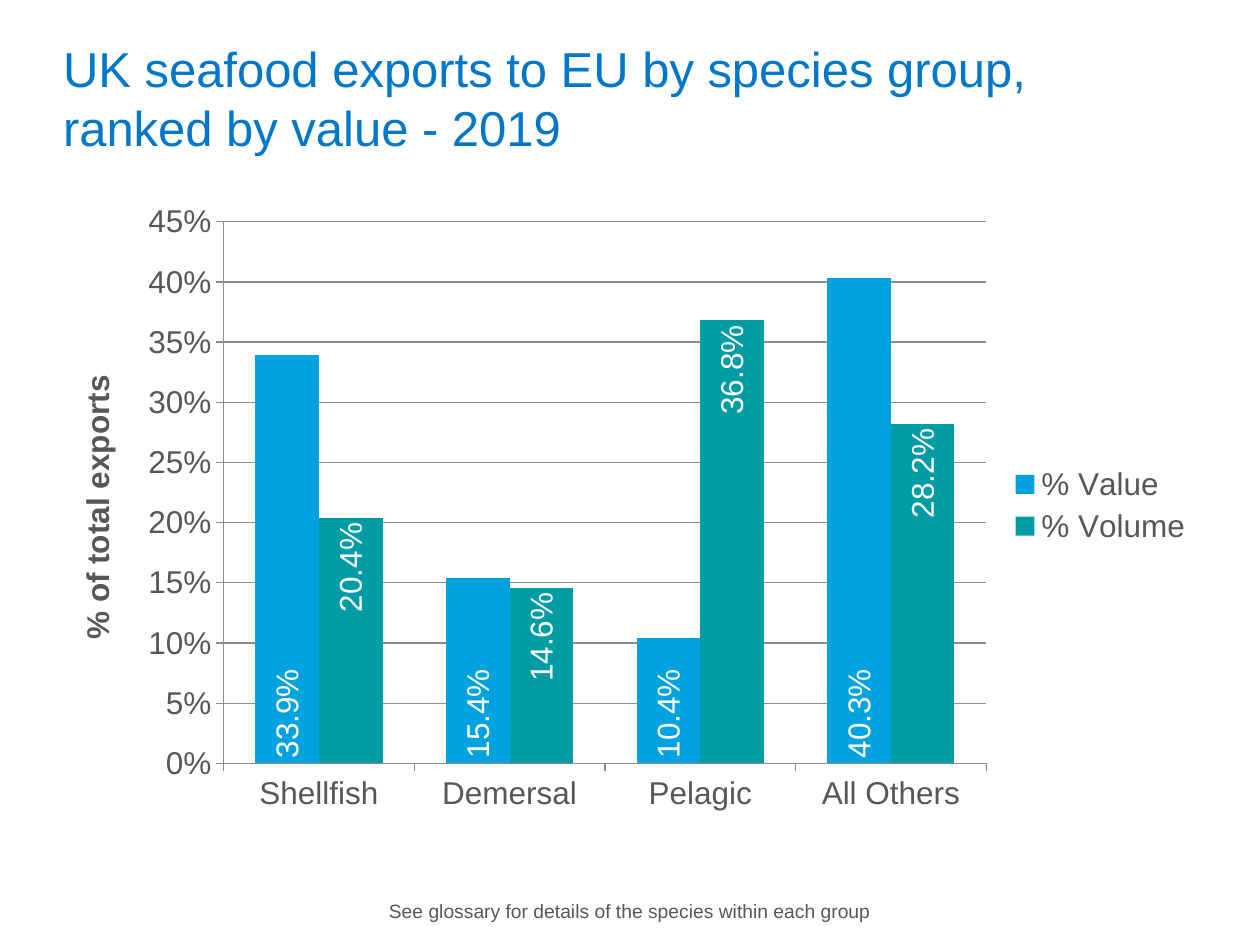
from lxml.etree import SubElement
from pptx import Presentation
from pptx.chart.data import CategoryChartData
from pptx.dml.color import RGBColor
from pptx.enum.chart import XL_CHART_TYPE, XL_LABEL_POSITION, XL_LEGEND_POSITION, XL_TICK_MARK
from pptx.enum.text import MSO_ANCHOR, MSO_AUTO_SIZE, PP_ALIGN
from pptx.oxml.ns import qn
from pptx.util import Inches, Pt

TITLE_BLUE = RGBColor(0x00, 0x77, 0xC8)
VALUE_BLUE = RGBColor(0x00, 0xA3, 0xE0)
VOLUME_TEAL = RGBColor(0x00, 0x9C, 0xA6)
TEXT_GREY = RGBColor(0x54, 0x58, 0x5A)
LINE_GREY = RGBColor(0x8C, 0x8C, 0x8C)
WHITE = RGBColor(0xFF, 0xFF, 0xFF)

FONT = "Arial"
WIDTH, HEIGHT = Inches(10), Inches(7.5)
LEFT, CONTENT_WIDTH = Inches(0.4), Inches(9.17)
GROUPS = ["Shellfish", "Demersal", "Pelagic", "All Others"]
SERIES = [
    ("% Value", [0.339, 0.154, 0.104, 0.403], VALUE_BLUE, XL_LABEL_POSITION.INSIDE_BASE),
    ("% Volume", [0.204, 0.146, 0.368, 0.282], VOLUME_TEAL, XL_LABEL_POSITION.INSIDE_END),
]
PLOT_SHARES = {"x": 0.15, "y": 0.05, "w": 0.66, "h": 0.86}


def style_font(font, size, color, bold=False):
    font.name = FONT
    font.size = Pt(size)
    font.bold = bold
    font.color.rgb = color


def style_text(frame, size, color, alignment):
    frame.word_wrap = True
    frame.auto_size = MSO_AUTO_SIZE.NONE
    for para in frame.paragraphs:
        para.alignment = alignment
        for span in para.runs:
            style_font(span.font, size, color)


def fill_title(page):
    title = page.shapes.title
    title.left, title.top = LEFT, Inches(0.3)
    title.width, title.height = CONTENT_WIDTH, Inches(0.94)
    frame = title.text_frame
    frame.text = "UK seafood exports to EU by species group,\vranked by value - 2019"
    frame.vertical_anchor = MSO_ANCHOR.MIDDLE
    style_text(frame, 28, TITLE_BLUE, PP_ALIGN.LEFT)


def style_line(line):
    line.color.rgb = LINE_GREY
    line.width = Pt(0.75)


def style_axes(chart):
    for axis in (chart.category_axis, chart.value_axis):
        axis.major_tick_mark = XL_TICK_MARK.OUTSIDE
        axis.minor_tick_mark = XL_TICK_MARK.NONE
        style_font(axis.tick_labels.font, 18, TEXT_GREY)
        style_line(axis.format.line)
    axis = chart.value_axis
    axis.minimum_scale, axis.maximum_scale, axis.major_unit = 0, 0.45, 0.05
    axis.tick_labels.number_format = "0%"
    axis.tick_labels.number_format_is_linked = False
    axis.has_major_gridlines = True
    style_line(axis.major_gridlines.format.line)
    frame = axis.axis_title.text_frame
    frame.text = "% of total exports"
    style_font(frame.paragraphs[0].runs[0].font, 18, TEXT_GREY, bold=True)


def style_series(series, color, position):
    series.format.fill.solid()
    series.format.fill.fore_color.rgb = color
    series.invert_if_negative = False
    labels = series.data_labels
    labels.show_value = True
    labels.number_format = "0.0%"
    labels.number_format_is_linked = False
    labels.position = position
    style_font(labels.font, 18, WHITE)
    body = labels._element.find(qn("c:txPr")).find(qn("a:bodyPr"))
    body.set("rot", "-5400000")
    body.set("vert", "horz")


def place_plot(chart):
    area = chart._chartSpace.chart.plotArea
    layout = area.find(qn("c:layout"))
    if layout is None:
        layout = SubElement(area, qn("c:layout"))
        area.insert(0, layout)
    manual = SubElement(layout, qn("c:manualLayout"))
    settings = {"layoutTarget": "inner", "xMode": "edge", "yMode": "edge", **PLOT_SHARES}
    for name, value in settings.items():
        SubElement(manual, qn(f"c:{name}")).set("val", str(value))


def add_export_chart(page):
    data = CategoryChartData()
    data.categories = GROUPS
    for name, values, _, _ in SERIES:
        data.add_series(name, values)
    chart = page.shapes.add_chart(
        XL_CHART_TYPE.COLUMN_CLUSTERED, LEFT, Inches(1.51), CONTENT_WIDTH, Inches(5), data
    ).chart
    style_font(chart.font, 18, TEXT_GREY)
    chart.has_title = False
    chart.has_legend = True
    chart.legend.position = XL_LEGEND_POSITION.RIGHT
    chart.legend.include_in_layout = False
    style_font(chart.legend.font, 18, TEXT_GREY)
    plot = chart.plots[0]
    plot.gap_width, plot.overlap = 100, 0
    plot.vary_by_categories = False
    style_axes(chart)
    for series, (_, _, color, position) in zip(plot.series, SERIES):
        style_series(series, color, position)
    place_plot(chart)


def add_footnote(page):
    box = page.shapes.add_textbox(0, Inches(6.9), WIDTH, Inches(0.47))
    frame = box.text_frame
    frame.text = "See glossary for details of the species within each group"
    frame.vertical_anchor = MSO_ANCHOR.BOTTOM
    style_text(frame, 11, TEXT_GREY, PP_ALIGN.CENTER)


def main():
    deck = Presentation()
    deck.slide_width, deck.slide_height = WIDTH, HEIGHT
    page = deck.slides.add_slide(deck.slide_layouts[5])
    fill_title(page)
    add_export_chart(page)
    add_footnote(page)
    deck.save("out.pptx")


if __name__ == "__main__":
    main()
